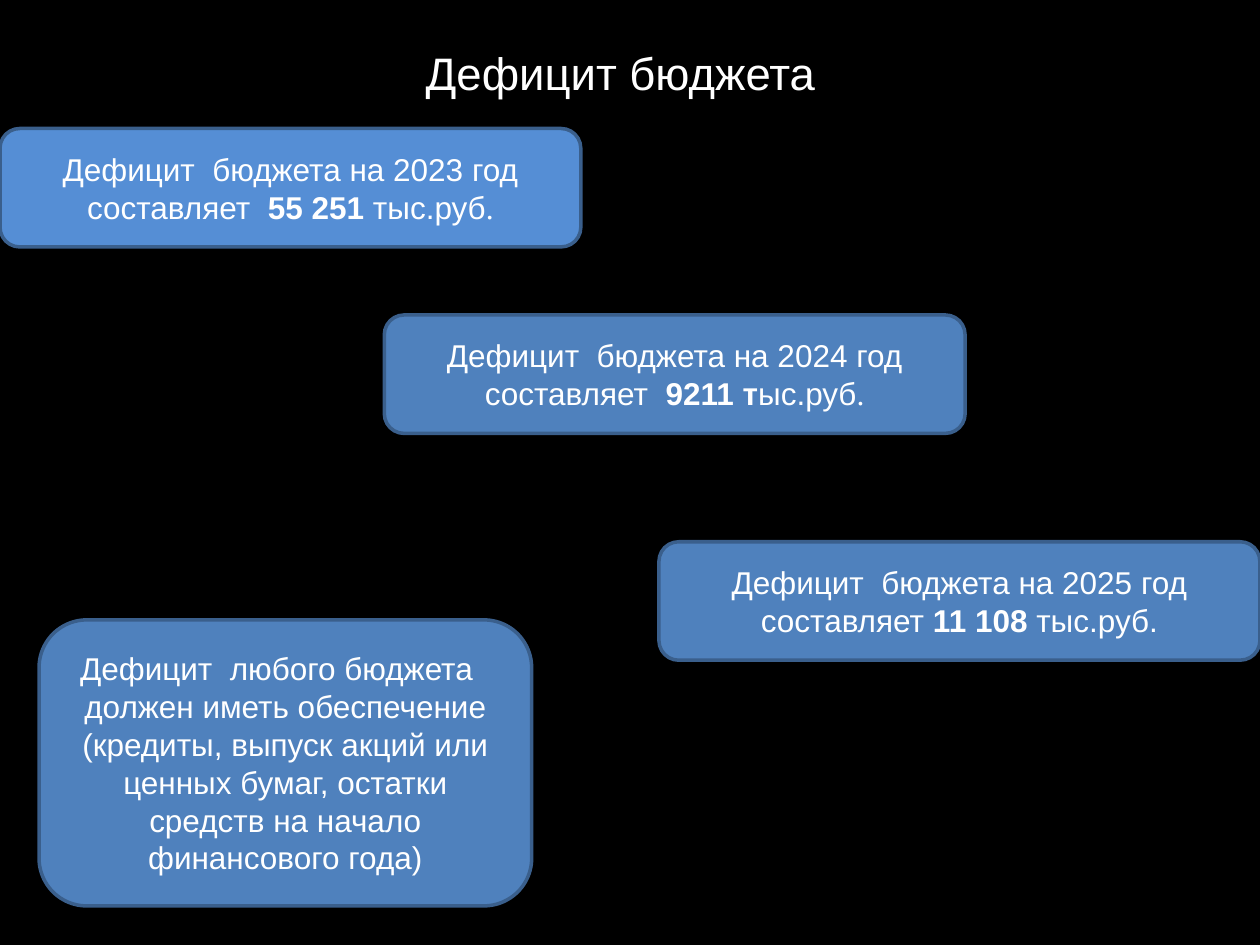
"""Build the budget deficit slide."""
import pptx
import pptx.util
import pptx.dml.color
import pptx.enum.shapes
import pptx.enum.text

Inches = pptx.util.Inches
HUES = {"back": "000000", "text": "FFFFFF", "blue": "4F81BD",
        "light": "558ED5", "edge": "3A5F8C"}


def paint(fill, hue):
    fill.solid()
    fill.fore_color.rgb = pptx.dml.color.RGBColor.from_string(HUES[hue])


def write(par, text, size, style):
    run = par.add_run()
    run.text = text
    form = {"size": pptx.util.Pt(size), "name": "Arial", "bold": False} | style
    for key, value in form.items():
        setattr(run.font, key, value)
    paint(run.font.fill, "text")


deck = pptx.Presentation()
deck.slide_width, deck.slide_height = Inches(10), Inches(7.5)
slide = deck.slides.add_slide(deck.slide_layouts[6])
paint(slide.background.fill, "back")

title = slide.shapes.add_textbox(*map(Inches, (3.28, 0.31, 3.91, 0.54)))
title.text_frame.word_wrap = True
title.text_frame.auto_size = pptx.enum.text.MSO_AUTO_SIZE.SHAPE_TO_FIT_TEXT
write(title.text_frame.paragraphs[0], "Дефицит бюджета", 26, {})

BOLD = {"bold": True}
TIMES = {"name": "Times New Roman"}
CARDS = [
    ((3.05, 2.5, 4.61, 0.94), "blue",
     [("Дефицит  бюджета на 2024 год составляет  ", {}), ("9211 т", BOLD),
      ("ыс.руб", {}), (".", TIMES)]),
    ((0.31, 4.92, 3.91, 2.27), "blue",
     [("Дефицит  любого бюджета   должен иметь обеспечение (кредиты, выпуск "
       "акций или ценных бумаг, остатки средств на начало финансового года)", {})]),
    ((0, 1.02, 4.61, 0.94), "light",
     [("Дефицит  бюджета на 2023 год составляет  ", {}), ("55 251 ", BOLD),
      ("тыс.руб", {}), (".", TIMES)]),
    ((5.23, 4.3, 4.77, 0.94), "blue",
     [("Дефицит  бюджета на 2025 год составляет ", {}), ("11 108", BOLD),
      (" тыс.руб.", {})]),
]
for box, hue, runs in CARDS:
    card = slide.shapes.add_shape(
        pptx.enum.shapes.MSO_SHAPE.ROUNDED_RECTANGLE, *map(Inches, box))
    card.shadow.inherit = False
    paint(card.fill, hue)
    paint(card.line.fill, "edge")
    card.line.width = pptx.util.Pt(2)
    frame = card.text_frame
    frame.word_wrap = True
    frame.vertical_anchor = pptx.enum.text.MSO_ANCHOR.MIDDLE
    par = frame.paragraphs[0]
    par.alignment = pptx.enum.text.PP_ALIGN.CENTER
    for text, style in runs:
        write(par, text, 18, style)

deck.save("out.pptx")
